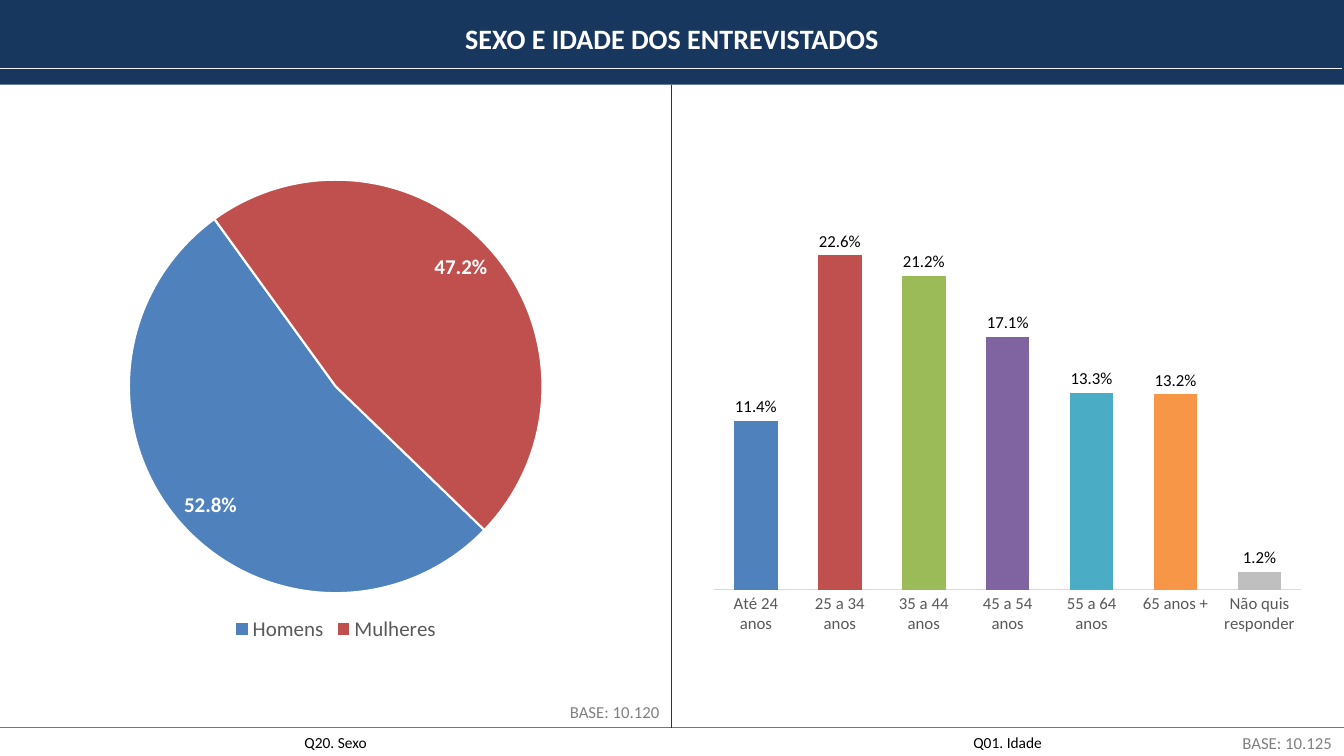
from pptx import Presentation
from pptx.chart.data import CategoryChartData
from pptx.dml.color import RGBColor
from pptx.enum.chart import XL_CHART_TYPE, XL_LABEL_POSITION, XL_LEGEND_POSITION, XL_TICK_MARK
from pptx.enum.shapes import MSO_CONNECTOR, MSO_SHAPE
from pptx.enum.text import MSO_ANCHOR, PP_ALIGN
from pptx.oxml import parse_xml
from pptx.oxml.ns import nsdecls, qn
from pptx.util import Inches, Pt

COLORS = {
    "navy": "17375E", "rule": "4B7EBC", "pale": "F2F2F2", "white": "FFFFFF",
    "black": "000000", "base": "808080", "label": "595959", "axis": "D9D9D9",
    "blue": "4F81BD", "red": "C0504D", "green": "9BBB59", "purple": "8064A2",
    "teal": "4BACC6", "orange": "F79646", "gray": "BFBFBF",
}
FONT = "Calibri"
WIDTH, HEIGHT = 13.33, 7.5
HEADER_HEIGHT = 0.84
FOOTER_TOP = 7.22
MIDDLE = 6.66

SEX = {"Homens": (0.528, "blue"), "Mulheres": (0.472, "red")}
AGE = {
    "Até 24 anos": (0.114, "blue"),
    "25 a 34 anos": (0.226, "red"),
    "35 a 44 anos": (0.212, "green"),
    "45 a 54 anos": (0.171, "purple"),
    "55 a 64 anos": (0.133, "teal"),
    "65 anos +": (0.132, "orange"),
    "Não quis responder": (0.012, "gray"),
}


def color(name):
    return RGBColor.from_string(COLORS[name])


def format_font(font, size, color_name, bold=False):
    font.name = FONT
    font.size = Pt(size)
    font.bold = bold
    font.color.rgb = color(color_name)


def write_text(shape, text, size, color_name, align=PP_ALIGN.CENTER, bold=False):
    frame = shape.text_frame
    frame.word_wrap = True
    frame.vertical_anchor = MSO_ANCHOR.TOP
    frame.margin_left = frame.margin_right = Inches(0.1)
    frame.margin_top = frame.margin_bottom = Inches(0.05)
    paragraph = frame.paragraphs[0]
    paragraph.alignment = align
    run = paragraph.add_run()
    run.text = text
    format_font(run.font, size, color_name, bold)


def add_label(slide, box, text, **text_format):
    write_text(slide.shapes.add_textbox(*map(Inches, box)), text, **text_format)


def add_line(slide, start, end, color_name, width):
    line = slide.shapes.add_connector(
        MSO_CONNECTOR.STRAIGHT, *map(Inches, (*start, *end)))
    line.line.color.rgb = color(color_name)
    line.line.width = Pt(width)
    properties = line.element.find(qn("p:spPr"))
    properties.append(parse_xml(f"<a:effectLst {nsdecls('a')}/>"))


def set_plot_area(chart, left, top, width, height):
    plot_area = chart.element.xpath("c:chart/c:plotArea")[0]
    for layout in plot_area.findall(qn("c:layout")):
        plot_area.remove(layout)
    fractions = {"x": left, "y": top, "w": width, "h": height}
    modes = '<c:layoutTarget val="inner"/><c:xMode val="edge"/><c:yMode val="edge"/>'
    values = "".join(f'<c:{key} val="{value}"/>' for key, value in fractions.items())
    plot_area.insert(0, parse_xml(
        f"<c:layout {nsdecls('c')}><c:manualLayout>{modes}{values}</c:manualLayout></c:layout>"))


def add_share_chart(slide, box, chart_type, shares, position, **label_format):
    data = CategoryChartData(number_format="0.0%")
    data.categories = list(shares)
    data.add_series("Series 1", [value for value, _ in shares.values()])
    chart = slide.shapes.add_chart(chart_type, *map(Inches, box), data).chart
    chart.has_title = False
    chart.has_legend = False
    format_font(chart.font, 10, "black")
    plot = chart.plots[0]
    plot.vary_by_categories = False
    for index, (_, fill_name) in enumerate(shares.values()):
        fill = plot.series[0].points[index].format.fill
        fill.solid()
        fill.fore_color.rgb = color(fill_name)
    plot.has_data_labels = True
    labels = plot.data_labels
    labels.show_value = True
    labels.number_format = "0.0%"
    labels.number_format_is_linked = False
    labels.position = position
    format_font(labels.font, **label_format)
    return chart


def add_header(slide, left, top, width, height):
    band = slide.shapes.add_shape(
        MSO_SHAPE.RECTANGLE, *map(Inches, (left, top, width, height)))
    band.shadow.inherit = False
    band.fill.solid()
    band.fill.fore_color.rgb = color("navy")
    band.line.fill.background()
    title = slide.shapes.title
    title.left, title.top, title.width, title.height = map(
        Inches, (left, top + 0.16, width, 0.44))
    write_text(title, "SEXO E IDADE DOS ENTREVISTADOS", 20, "white", bold=True)
    band.element.addnext(title.element)
    add_line(slide, (left, top + 0.68), (left + width - 0.02, top + 0.68), "pale", 1)


def add_sex_panel(slide, left, top, width, height):
    chart = add_share_chart(
        slide, (left + 0.3, top + 0.8, 6.06, 4.77), XL_CHART_TYPE.PIE, SEX,
        XL_LABEL_POSITION.INSIDE_END, size=15, color_name="white", bold=True)
    set_plot_area(chart, 0.16, 0.03, 0.68, 0.86)
    for index in range(len(SEX)):
        outline = chart.plots[0].series[0].points[index].format.line
        outline.color.rgb = color("white")
        outline.width = Pt(1.5)
    chart.has_legend = True
    chart.legend.position = XL_LEGEND_POSITION.BOTTOM
    chart.legend.include_in_layout = False
    format_font(chart.legend.font, 15, "label")
    pie = chart.element.xpath(".//c:pieChart")[0]
    for angle in pie.findall(qn("c:firstSliceAng")):
        pie.remove(angle)
    pie.append(parse_xml(f'<c:firstSliceAng {nsdecls("c")} val="134"/>'))
    bottom = top + height
    add_label(slide, (left, bottom, width, 0.29), "Q20. Sexo", size=11, color_name="black")
    add_label(slide, (left + width - 2.3, bottom - 0.31, 2.28, 0.3), "BASE: 10.120",
              size=12, color_name="base", align=PP_ALIGN.RIGHT)


def add_age_panel(slide, left, top, width, height):
    chart = add_share_chart(
        slide, (left + 0.3, top + 0.5, 6.07, 5.37), XL_CHART_TYPE.COLUMN_CLUSTERED, AGE,
        XL_LABEL_POSITION.OUTSIDE_END, size=12, color_name="black")
    set_plot_area(chart, 0.02, 0.02, 0.96, 0.82)
    chart.plots[0].gap_width = 92
    chart.plots[0].overlap = -27
    value_axis = chart.value_axis
    value_axis.minimum_scale = 0
    value_axis.maximum_scale = 0.3
    value_axis.has_major_gridlines = False
    value_axis.visible = False
    category_axis = chart.category_axis
    category_axis.major_tick_mark = XL_TICK_MARK.NONE
    category_axis.format.line.color.rgb = color("axis")
    category_axis.format.line.width = Pt(0.75)
    format_font(category_axis.tick_labels.font, 12, "label")
    bottom = top + height
    add_label(slide, (left, bottom, width, 0.29), "Q01. Idade", size=11, color_name="black")
    add_label(slide, (left + width - 1.47, bottom, 1.45, 0.3), "BASE: 10.125",
              size=12, color_name="base", align=PP_ALIGN.RIGHT)


def main():
    presentation = Presentation()
    presentation.slide_width = Inches(WIDTH)
    presentation.slide_height = Inches(HEIGHT)
    slide = presentation.slides.add_slide(presentation.slide_layouts[5])
    add_line(slide, (0, FOOTER_TOP), (WIDTH, FOOTER_TOP), "rule", 0.75)
    add_header(slide, 0, 0, WIDTH, HEADER_HEIGHT)
    add_line(slide, (MIDDLE, HEADER_HEIGHT), (MIDDLE, FOOTER_TOP), "navy", 1)
    panel_height = FOOTER_TOP - HEADER_HEIGHT
    add_sex_panel(slide, 0, HEADER_HEIGHT, MIDDLE, panel_height)
    add_age_panel(slide, MIDDLE, HEADER_HEIGHT, WIDTH - MIDDLE, panel_height)
    presentation.save("out.pptx")


if __name__ == "__main__":
    main()
